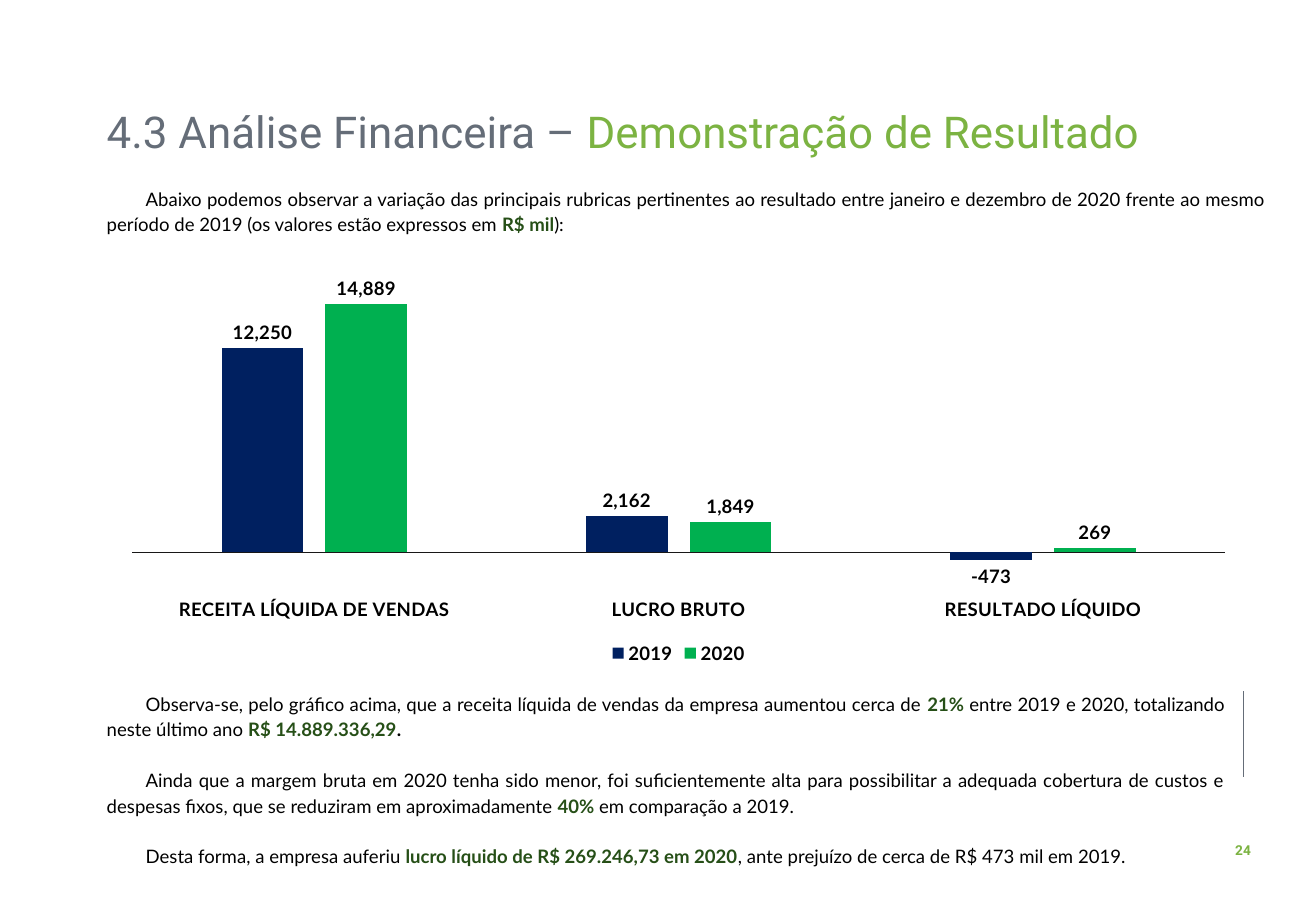
import pptx
import pptx.util
import pptx.chart.data
import pptx.dml.color
import pptx.enum.chart
import pptx.enum.shapes
import pptx.enum.text
import pptx.oxml.ns
import lxml.etree

COLORS = {
    "slate": "656D78", "lime": "7CB342", "forest": "264F17", "black": "000000",
    "navy": "002060", "green": "00B050", "axis": "181717",
}
ALIGN = pptx.enum.text.PP_ALIGN

presentation = pptx.Presentation()
presentation.slide_width = pptx.util.Inches(10.83)
presentation.slide_height = pptx.util.Inches(7.5)
slide = presentation.slides.add_slide(presentation.slide_layouts[6])


def area(left, top, width, height):
    """Turn percentages of the slide's size into lengths."""
    across, down = presentation.slide_width / 100, presentation.slide_height / 100
    return [int(left * across), int(top * down), int(width * across), int(height * down)]


def style(font, name, size, color, bold=False):
    font.name = name
    font.size = pptx.util.Pt(size)
    font.bold = bold
    font.color.rgb = pptx.dml.color.RGBColor.from_string(COLORS[color])


# Page number and its rule
rule_left, rule_top, _, rule_height = area(94.46, 75.87, 0, 9.46)
rule = slide.shapes.add_connector(
    pptx.enum.shapes.MSO_CONNECTOR.STRAIGHT,
    rule_left, rule_top, rule_left, rule_top + rule_height)
rule.line.color.rgb = pptx.dml.color.RGBColor.from_string(COLORS["slate"])
rule.line.width = pptx.util.Pt(0.5)
lxml.etree.SubElement(rule._element.spPr, pptx.oxml.ns.qn("a:effectLst"))

page_number = slide.shapes.add_textbox(*area(92.89, 91.73, 3.14, 3.2))
page_number.text_frame.word_wrap = False
page_number.text_frame.text = "24"
paragraph = page_number.text_frame.paragraphs[0]
paragraph.alignment = ALIGN.CENTER
style(paragraph.runs[0].font, "Roboto", 8.1, "lime", bold=True)

# Title
title = slide.shapes.add_textbox(*area(7.2, 11.47, 87.63, 7.07))
title.text_frame.word_wrap = True
paragraph = title.text_frame.paragraphs[0]
paragraph.line_spacing = 0.9
for text, color in [("4.3 Análise Financeira – ", "slate"),
                    ("Demonstração de Resultado", "lime")]:
    run = paragraph.add_run()
    run.text = text
    style(run.font, "Roboto", 26, color)

# Body text: in each paragraph the second run is the highlighted one, then alternating
introduction = [
    ["Abaixo podemos observar a variação das principais rubricas pertinentes ao resultado "
     "entre janeiro e dezembro de 2020 frente ao mesmo período de 2019 (os valores estão "
     "expressos em ", "R$ mil", "):"],
]
conclusions = [
    ["Observa-se, pelo gráfico acima, que a receita líquida de vendas da empresa aumentou "
     "cerca de ", "21% ", "entre 2019 e 2020, totalizando neste último ano ",
     "R$ 14.889.336,29", "."],
    ["Ainda que a margem bruta em 2020 tenha sido menor, foi suficientemente alta para "
     "possibilitar a adequada cobertura de custos e despesas fixos, que se reduziram em "
     "aproximadamente ", "40% ", "em comparação a 2019."],
    ["Desta forma, a empresa auferiu ", "lucro líquido de R$ 269.246,73 em 2020",
     ", ante prejuízo de cerca de R$ 473 mil em 2019."],
]
for place, paragraphs in [(area(7.2, 19.6, 89.94, 6.8), introduction),
                          (area(7.2, 75.07, 86.8, 20.93), conclusions)]:
    frame = slide.shapes.add_textbox(*place).text_frame
    frame.word_wrap = True
    for index, texts in enumerate(paragraphs):
        paragraph = frame.add_paragraph() if index else frame.paragraphs[0]
        paragraph.alignment = ALIGN.JUSTIFY
        paragraph.line_spacing = 1.14
        if index:
            paragraph.space_before = pptx.util.Pt(15)
        paragraph._p.get_or_add_pPr().set("indent", str(pptx.util.Inches(0.32)))
        for position, text in enumerate(texts):
            highlighted = position % 2 == 1
            run = paragraph.add_run()
            run.text = text
            style(run.font, "Lato", 11, "forest" if highlighted else "black",
                  bold=highlighted or text == ".")

# Chart
chart_data = pptx.chart.data.CategoryChartData(number_format="#,##0")
chart_data.categories = ["RECEITA LÍQUIDA DE VENDAS", "LUCRO BRUTO", "RESULTADO LÍQUIDO"]
chart_data.add_series("2019", [12250, 2162, -473])
chart_data.add_series("2020", [14889, 1849, 269])
chart = slide.shapes.add_chart(
    pptx.enum.chart.XL_CHART_TYPE.COLUMN_CLUSTERED,
    *area(8.31, 30.4, 86.52, 43.07), chart_data).chart
chart.has_title = False
style(chart.font, "Lato", 11, "black", bold=True)

chart.has_legend = True
chart.legend.position = pptx.enum.chart.XL_LEGEND_POSITION.BOTTOM
chart.legend.include_in_layout = False
style(chart.legend.font, "Lato", 11, "black", bold=True)

category_axis = chart.category_axis
category_axis.tick_label_position = pptx.enum.chart.XL_TICK_LABEL_POSITION.LOW
category_axis.major_tick_mark = pptx.enum.chart.XL_TICK_MARK.NONE
category_axis.format.line.color.rgb = pptx.dml.color.RGBColor.from_string(COLORS["axis"])
category_axis.format.line.width = pptx.util.Pt(0.75)
style(category_axis.tick_labels.font, "Lato", 11, "black", bold=True)

chart.value_axis.visible = False
chart.value_axis.has_major_gridlines = False
chart.value_axis.minimum_scale = -2000
chart.value_axis.maximum_scale = 16000

plot = chart.plots[0]
plot.gap_width = 219
plot.overlap = -27
plot.vary_by_categories = False
for series, color in zip(plot.series, ["navy", "green"]):
    series.invert_if_negative = False
    series.format.fill.solid()
    series.format.fill.fore_color.rgb = pptx.dml.color.RGBColor.from_string(COLORS[color])
    labels = series.data_labels
    labels.show_value = True
    labels.number_format = "#,##0"
    labels.number_format_is_linked = False
    labels.position = pptx.enum.chart.XL_LABEL_POSITION.OUTSIDE_END
    style(labels.font, "Lato", 11, "black", bold=True)

presentation.save("out.pptx")
